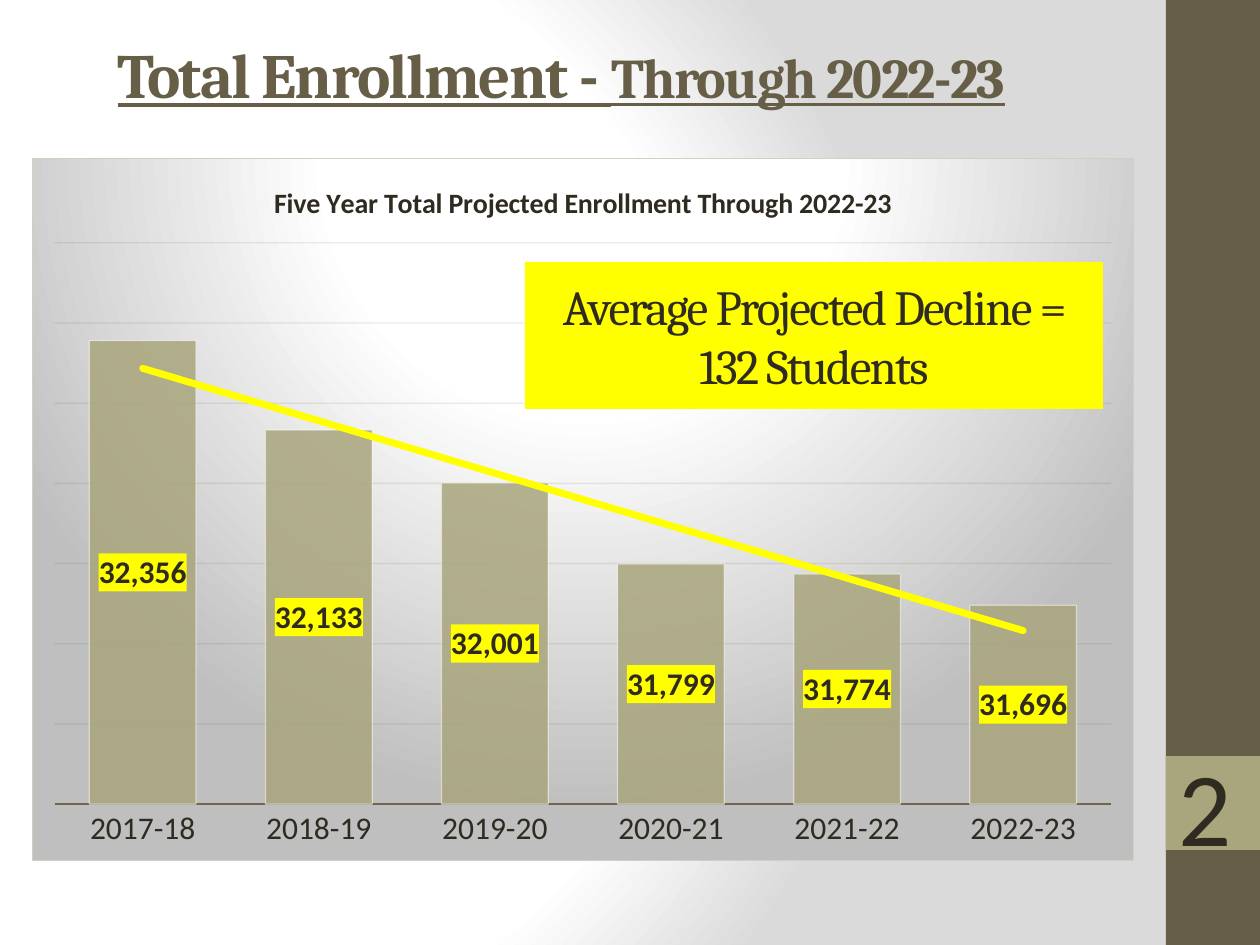
from dataclasses import dataclass

from lxml.etree import SubElement, fromstring
from pptx import Presentation
from pptx.chart.data import CategoryChartData
from pptx.dml.color import RGBColor
from pptx.enum.chart import XL_CHART_TYPE as ChartType
from pptx.enum.chart import XL_LABEL_POSITION as LabelPosition
from pptx.enum.chart import XL_TICK_MARK as TickMark
from pptx.enum.shapes import MSO_SHAPE as Shape
from pptx.enum.text import MSO_ANCHOR as Anchor
from pptx.enum.text import PP_ALIGN as Align
from pptx.oxml.ns import qn
from pptx.util import Emu, Pt

EMU_PER_PX = 914400 / 126
NAMESPACES = (
    'xmlns:a="http://schemas.openxmlformats.org/drawingml/2006/main" '
    'xmlns:c="http://schemas.openxmlformats.org/drawingml/2006/chart" '
    'xmlns:p="http://schemas.openxmlformats.org/presentationml/2006/main"'
)
BROWN, OLIVE, INK, YELLOW = "675E47", "A9A57C", "2F2B20", "FFFF00"


@dataclass(frozen=True)
class Box:
    left: int
    top: int
    width: int
    height: int

    def emu(self) -> list[Emu]:
        return [px(n) for n in (self.left, self.top, self.width, self.height)]


@dataclass(frozen=True)
class Panel:
    box: Box
    fill: str


def px(length: int) -> Emu:
    return Emu(round(length * EMU_PER_PX))


def rgb(color: str) -> RGBColor:
    return RGBColor.from_string(color)


def xml(tag: str, body: str, attributes: str = ""):
    return fromstring(f"<{tag} {NAMESPACES} {attributes}>{body}</{tag}>")


def gradient(stops: dict[int, str], focus: dict[str, int]) -> str:
    marks = "".join(
        f'<a:gs pos="{pos * 1000}"><a:srgbClr val="{color}"/></a:gs>'
        for pos, color in stops.items()
    )
    sides = " ".join(f'{side}="{value * 1000}"' for side, value in focus.items())
    return (
        f'<a:gradFill rotWithShape="1"><a:gsLst>{marks}</a:gsLst>'
        f'<a:path path="circle"><a:fillToRect {sides}/></a:path></a:gradFill>'
    )


def solid(color: str) -> str:
    return f'<a:solidFill><a:srgbClr val="{color}"/></a:solidFill>'


def set_alpha(fill, percent: int) -> None:
    color = fill._xPr.find(qn("a:solidFill"))[0]
    SubElement(color, qn("a:alpha")).set("val", str(percent * 1000))


def style_font(font, size: int, color: str = INK, name: str = "Calibri", bold: bool = False) -> None:
    font.size, font.name, font.bold = Pt(size), name, bold
    font.color.rgb = rgb(color)


def tighten(run) -> None:
    run.font._element.set("spc", "-100")


def set_background(slide) -> None:
    fill = gradient(
        {0: "FFFFFF", 75: "FFFFFF", 100: "DADADA"},
        {"l": 20, "t": 50, "r": 100, "b": 50},
    )
    slide._element.cSld.insert(0, xml("p:bg", f"<p:bgPr>{fill}<a:effectLst/></p:bgPr>"))


def add_panel(slide, panel: Panel):
    shape = slide.shapes.add_shape(Shape.RECTANGLE, *panel.box.emu())
    shape.shadow.inherit = False
    shape.fill.solid()
    shape.fill.fore_color.rgb = rgb(panel.fill)
    shape.line.fill.background()
    return shape


def write_title(slide, box: Box) -> None:
    title = slide.shapes.title
    title.left, title.top, title.width, title.height = box.emu()
    title.text_frame.vertical_anchor = Anchor.MIDDLE
    heading = title.text_frame.paragraphs[0]
    heading.alignment = Align.CENTER
    style_font(heading.font, 36, BROWN, "Cambria", True)
    heading.font.underline = True
    for words, size in (("Total Enrollment - ", 36), ("Through 2022-23", 32)):
        run = heading.add_run()
        run.text = words
        run.font.size = Pt(size)
        tighten(run)


def add_enrollment_chart(slide, box: Box) -> None:
    enrollment = {
        "2017-18": 32356,
        "2018-19": 32133,
        "2019-20": 32001,
        "2020-21": 31799,
        "2021-22": 31774,
        "2022-23": 31696,
    }
    data = CategoryChartData(number_format="#,##0")
    data.categories = list(enrollment)
    data.add_series("Series 1", list(enrollment.values()))
    chart = slide.shapes.add_chart(ChartType.COLUMN_CLUSTERED, *box.emu(), data).chart
    style_font(chart.font, 10)
    chart.has_legend = False
    heading = chart.chart_title.text_frame
    heading.text = "Five Year Total Projected Enrollment Through 2022-23"
    style_font(heading.paragraphs[0].font, 16, bold=True)

    years, students = chart.category_axis, chart.value_axis
    years.major_tick_mark = TickMark.NONE
    style_font(years.tick_labels.font, 18)
    years.format.line.color.rgb = rgb("6F664C")
    years.format.line.width = Pt(1.5)
    students.minimum_scale, students.maximum_scale, students.major_unit = 31200, 32600, 200
    students.visible = False
    grid = students.major_gridlines.format.line
    grid.color.rgb = rgb("3C3729")
    grid.width = Pt(0.75)
    set_alpha(grid.fill, 10)

    plot = chart.plots[0]
    plot.gap_width = 65
    plot.vary_by_categories = False
    style_columns(plot.series[0])
    style_chart_frame(chart)


def style_columns(columns) -> None:
    columns.format.fill.solid()
    columns.format.fill.fore_color.rgb = rgb(OLIVE)
    set_alpha(columns.format.fill, 85)
    outline = columns.format.line
    outline.color.rgb = rgb("FFFFFF")
    outline.width = Pt(0.75)
    set_alpha(outline.fill, 50)

    labels = columns.data_labels
    style_font(labels.font, 18, bold=True)
    labels.show_value = True
    labels.position = LabelPosition.CENTER
    labels.number_format = "#,##0"
    labels.number_format_is_linked = False
    labels._element.find(qn("c:numFmt")).addnext(xml("c:spPr", solid(YELLOW)))
    trend = xml(
        "c:trendline",
        f'<c:spPr><a:ln w="{Pt(4)}" cap="rnd">{solid(YELLOW)}</a:ln></c:spPr>'
        '<c:trendlineType val="linear"/><c:dispRSqr val="0"/><c:dispEq val="0"/>',
    )
    columns._element.find(qn("c:cat")).addprevious(trend)


def style_chart_frame(chart) -> None:
    fill = gradient(
        {0: "FFFFFF", 39: "FFFFFF", 100: "BFBFBF"},
        {"l": 50, "t": -80, "r": 50, "b": 180},
    )
    border = f'<a:ln w="{Pt(0.75)}">{solid("D3CEBF")}</a:ln>'
    body = chart._chartSpace.find(qn("c:chart"))
    body.addnext(xml("c:spPr", fill + border))
    area = body.find(qn("c:plotArea"))
    for old in area.findall(qn("c:layout")):
        area.remove(old)
    places = {"x": 0.02, "y": 0.12, "w": 0.96, "h": 0.8}
    modes = '<c:layoutTarget val="inner"/><c:xMode val="edge"/><c:yMode val="edge"/>'
    sizes = "".join(f'<c:{key} val="{value}"/>' for key, value in places.items())
    area.insert(0, xml("c:layout", f"<c:manualLayout>{modes}{sizes}</c:manualLayout>"))


def add_callout(slide, panel: Panel) -> None:
    frame = add_panel(slide, panel).text_frame
    frame.word_wrap = True
    frame.vertical_anchor = Anchor.MIDDLE
    message = frame.paragraphs[0]
    message.alignment = Align.CENTER
    style_font(message.font, 28, INK, "Cambria")
    run = message.add_run()
    run.text = "Average Projected Decline = 132 Students"
    tighten(run)


def add_page_number(slide, box: Box) -> None:
    frame = slide.shapes.add_textbox(*box.emu()).text_frame
    frame.word_wrap = True
    frame.text = "2"
    style_font(frame.paragraphs[0].font, 60)


def main() -> None:
    deck = Presentation()
    deck.slide_width, deck.slide_height = px(1260), px(945)
    slide = deck.slides.add_slide(deck.slide_layouts[5])
    set_background(slide)
    for panel in (Panel(Box(1166, 0, 94, 945), BROWN), Panel(Box(1166, 756, 94, 94), OLIVE)):
        add_panel(slide, panel)
    write_title(slide, Box(21, 21, 1081, 105))
    add_enrollment_chart(slide, Box(32, 158, 1102, 703))
    add_callout(slide, Panel(Box(525, 262, 578, 147), YELLOW))
    add_page_number(slide, Box(1166, 735, 73, 140))
    deck.save("out.pptx")


if __name__ == "__main__":
    main()
